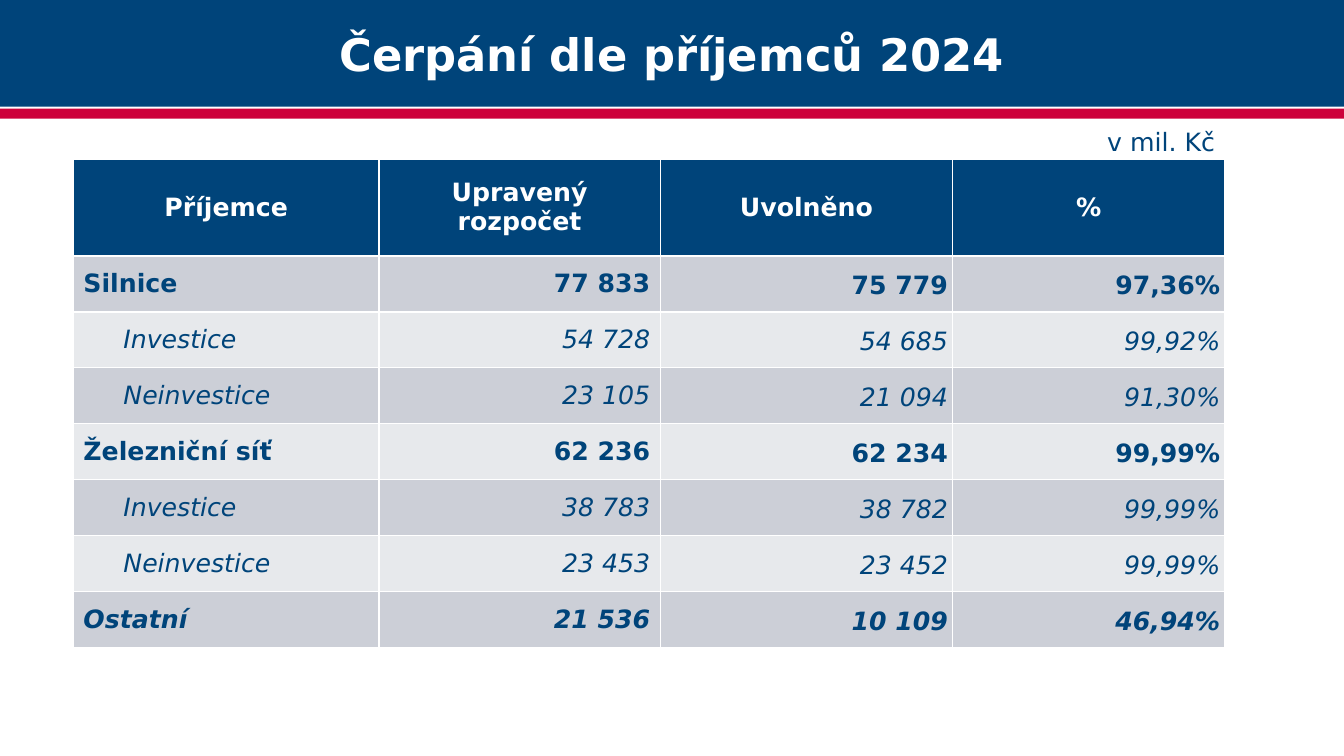
"""Build a slide with a table of 2024 spending by recipient."""
from pptx import Presentation
from pptx.dml.color import RGBColor
from pptx.enum.shapes import MSO_SHAPE as Shape
from pptx.enum.text import MSO_ANCHOR as Anchor, PP_ALIGN as Align
from pptx.util import Cm, Pt

TITLE = "Čerpání dle příjemců 2024"
UNIT = "v mil. Kč"
HEADER = ("Příjemce", "Upravený rozpočet", "Uvolněno", "%")
TOTAL, DETAIL, OTHER = (True, False), (False, True), (True, True)
ROWS = [
    (TOTAL, ("Silnice", "77 833", "75 779", "97,36%")),
    (DETAIL, ("Investice", "54 728", "54 685", "99,92%")),
    (DETAIL, ("Neinvestice", "23 105", "21 094", "91,30%")),
    (TOTAL, ("Železniční síť", "62 236", "62 234", "99,99%")),
    (DETAIL, ("Investice", "38 783", "38 782", "99,99%")),
    (DETAIL, ("Neinvestice", "23 453", "23 452", "99,99%")),
    (OTHER, ("Ostatní", "21 536", "10 109", "46,94%")),
]
COLORS = {"navy": "00447A", "red": "CD003A", "white": "FFFFFF",
          "dark band": "CCCFD7", "light band": "E7E9EC"}
FONT = "DejaVu Sans"
SLIDE_WIDTH, SLIDE_HEIGHT = 33.87, 19.05
TABLE_LEFT, TABLE_TOP = 1.85, 4.01
COLUMN_WIDTHS = (7.7, 7.09, 7.37, 6.86)
HEADER_HEIGHT, ROW_HEIGHT = 2.44, 1.41
DETAIL_INDENT = 1.26


def color(name):
    return RGBColor.from_string(COLORS[name])


def paint(shape, name):
    shape.fill.solid()
    shape.fill.fore_color.rgb = color(name)


def write(frame, text, align, ink, size=18, bold=False, italic=False):
    frame.text = text
    paragraph = frame.paragraphs[0]
    paragraph.alignment = align
    font = paragraph.font
    font.name, font.size = FONT, Pt(size)
    font.bold, font.italic = bold, italic
    font.color.rgb = color(ink)
    return paragraph


def add_heading(slide):
    stripe = slide.shapes.add_shape(
        Shape.RECTANGLE, 0, Cm(2.74), Cm(SLIDE_WIDTH), Cm(0.25))
    stripe.shadow.inherit = False
    paint(stripe, "red")
    stripe.line.fill.background()

    title = slide.shapes.title
    title.left, title.top = 0, 0
    title.width, title.height = Cm(SLIDE_WIDTH), Cm(2.69)
    paint(title, "navy")
    title.text_frame.vertical_anchor = Anchor.MIDDLE
    write(title.text_frame, TITLE, Align.CENTER, "white", 32, bold=True)


def fill_row(table, row, values, bold, italic):
    band = "dark band" if row % 2 else "light band"
    for column, value in enumerate(values):
        cell = table.cell(row, column)
        paint(cell, band)
        cell.vertical_anchor = Anchor.MIDDLE
        align = Align.RIGHT if column else Align.LEFT
        paragraph = write(cell.text_frame, value, align, "navy",
                          bold=bold, italic=italic)
        if column > 1:
            cell.margin_left = cell.margin_right = Cm(0.12)
            cell.margin_top = cell.margin_bottom = 0
            paragraph.line_spacing = 1.15
        elif column == 0 and (bold, italic) == DETAIL:
            cell.margin_left = Cm(DETAIL_INDENT)


def add_table(slide):
    height = HEADER_HEIGHT + ROW_HEIGHT * len(ROWS)
    table = slide.shapes.add_table(
        len(ROWS) + 1, len(HEADER), Cm(TABLE_LEFT), Cm(TABLE_TOP),
        Cm(sum(COLUMN_WIDTHS)), Cm(height)).table
    for column, width in zip(table.columns, COLUMN_WIDTHS):
        column.width = Cm(width)
    for row in table.rows:
        row.height = Cm(ROW_HEIGHT)
    table.rows[0].height = Cm(HEADER_HEIGHT)

    for cell, label in zip(table.rows[0].cells, HEADER):
        paint(cell, "navy")
        cell.vertical_anchor = Anchor.MIDDLE
        write(cell.text_frame, label, Align.CENTER, "white", bold=True)
    for row, ((bold, italic), values) in enumerate(ROWS, start=1):
        fill_row(table, row, values, bold, italic)


def add_unit(slide):
    width = 3.5
    left = TABLE_LEFT + sum(COLUMN_WIDTHS) - width
    box = slide.shapes.add_textbox(Cm(left), Cm(3.07), Cm(width), Cm(1.02))
    box.text_frame.word_wrap = True
    write(box.text_frame, UNIT, Align.RIGHT, "navy")


def main():
    presentation = Presentation()
    presentation.slide_width = Cm(SLIDE_WIDTH)
    presentation.slide_height = Cm(SLIDE_HEIGHT)
    slide = presentation.slides.add_slide(presentation.slide_layouts[5])
    add_heading(slide)
    add_table(slide)
    add_unit(slide)
    presentation.save("out.pptx")


if __name__ == "__main__":
    main()
